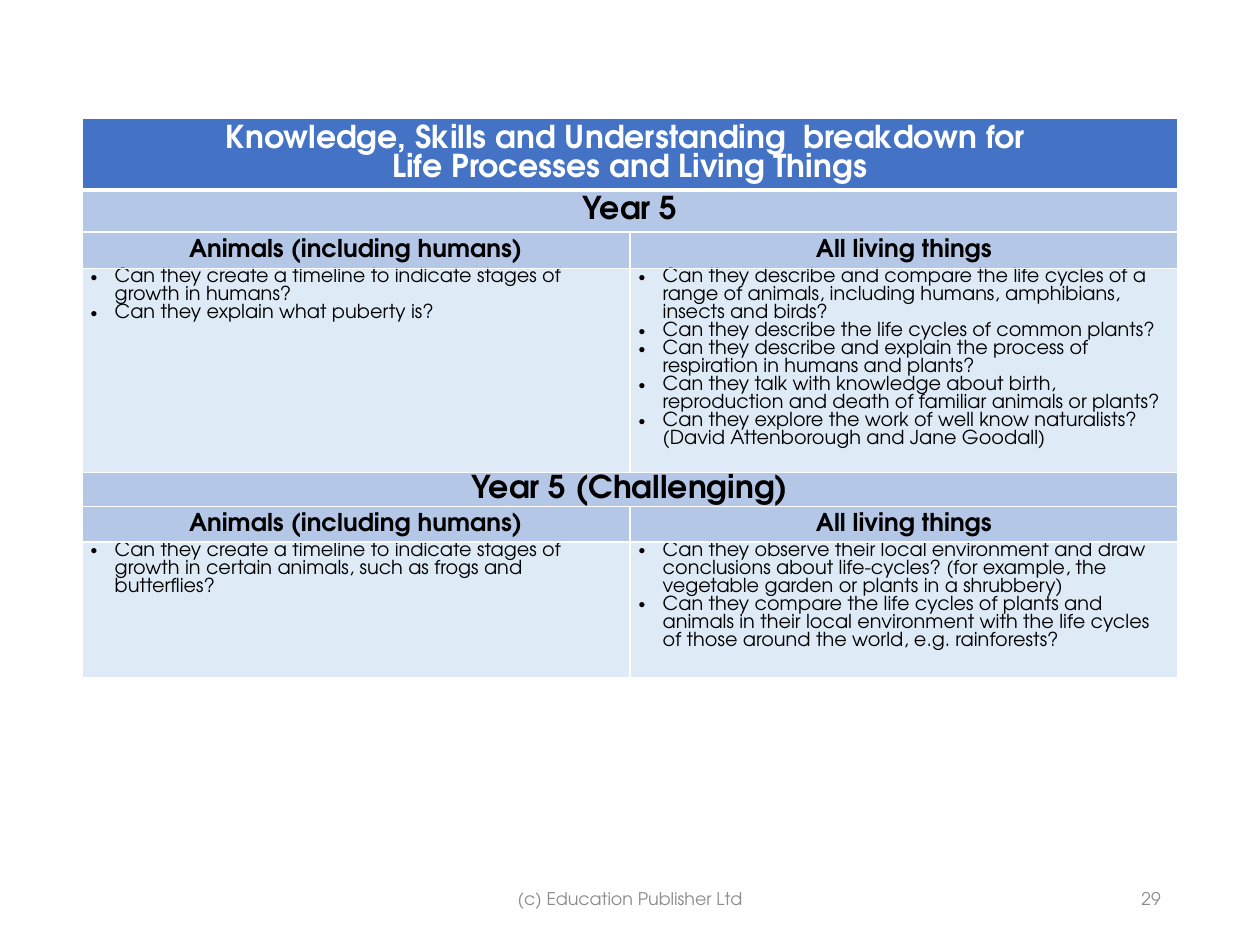
from lxml import etree
from pptx import Presentation
from pptx import util as u
from pptx.dml.color import RGBColor
from pptx.enum import text
from pptx.oxml import ns

THEME = {
    "font": "TeX Gyre Adventor",
    "title_fill": "4472C4", "heading_fill": "B4C7E7", "body_fill": "DEEBF7",
    "white": "FFFFFF", "black": "000000", "grey": "8C8C8C",
    "heading": 18, "subheading": 14, "body": 11, "footer": 10,
    "leading": 0.935, "indent": 0.19, "border": 1, "title_rule": 3,
}

TITLE = ["Knowledge, Skills and Understanding  breakdown for ",
         "Life Processes and Living Things"]
TOPICS = ["Animals (including humans)", "All living things"]
YEAR_5 = [
    ["Can they create a timeline to indicate stages of growth in humans?",
     "Can they explain what puberty is?"],
    ["Can they describe and compare the life cycles of a range of animals, including humans, amphibians, insects and birds?",
     "Can they describe the life cycles of common plants?",
     "Can they describe and explain the process of respiration in humans and plants?",
     "Can they talk with knowledge about birth, reproduction and death of familiar animals or plants?",
     "Can they explore the work of well know naturalists? (David Attenborough and Jane Goodall)"],
]
CHALLENGING = [
    ["Can they create a timeline to indicate stages of growth in certain animals, such as frogs and butterflies?"],
    ["Can they observe their local environment and draw conclusions about life-cycles? (for example, the vegetable garden or plants in a shrubbery)",
     "Can they compare the life cycles of plants and animals in their local environment with the life cycles of those around the world, e.g. rainforests?"],
]
TOPIC_CELLS = [[topic] for topic in TOPICS]

# (style, row height, cells); a row with one cell spans both columns
ROWS = [
    ("title", 0.56, [TITLE]),
    ("year", 0.33, [["Year 5"]]),
    ("topic", 0.29, TOPIC_CELLS),
    ("questions", 1.62, YEAR_5),
    ("challenge", 0.27, [["Year 5 (Challenging)"]]),
    ("topic", 0.28, TOPIC_CELLS),
    ("questions", 1.08, CHALLENGING),
]
HEADING = {"bold": True, "align": text.PP_ALIGN.CENTER}
# style: (fill, horizontal margin, vertical margin, anchor, text format)
STYLES = {
    "title": ("title_fill", 0.1, 0.05, text.MSO_ANCHOR.TOP,
              {**HEADING, "size": "heading", "color": "white"}),
    "year": ("heading_fill", 0.1, 0.05, text.MSO_ANCHOR.MIDDLE, {**HEADING, "size": "heading"}),
    "challenge": ("heading_fill", 0.07, 0, text.MSO_ANCHOR.MIDDLE, {**HEADING, "size": "heading"}),
    "topic": ("heading_fill", 0.07, 0, text.MSO_ANCHOR.MIDDLE, {**HEADING, "size": "subheading"}),
    "questions": ("body_fill", 0.07, 0, text.MSO_ANCHOR.TOP, {"size": "body", "bullet": True}),
}
TABLE_LEFT, TABLE_TOP, COLUMN_WIDTH = 0.65, 0.94, 4.35
FOOTER_TOP, FOOTER_HEIGHT = 6.95, 0.4
FOOTERS = [
    ("(c) Education Publisher Ltd", 3.31, 3.38, text.PP_ALIGN.CENTER),
    ("29", 7.06, 2.25, text.PP_ALIGN.RIGHT),
]


def rgb(name):
    return RGBColor.from_string(THEME[name])


def write(frame, lines, size, color="black", bold=False,
          align=text.PP_ALIGN.LEFT, bullet=False):
    points = THEME[size]
    for index, line in enumerate(lines):
        paragraph = frame.paragraphs[0] if index == 0 else frame.add_paragraph()
        paragraph.alignment = align
        paragraph.line_spacing = u.Pt(round(points * THEME["leading"], 1))
        run = paragraph.add_run()
        run.text = line
        run.font.name, run.font.size, run.font.bold = THEME["font"], u.Pt(points), bold
        run.font.color.rgb = rgb(color)
        if bullet:
            properties = paragraph._p.get_or_add_pPr()
            indent = u.Inches(THEME["indent"])
            properties.set("marL", str(indent))
            properties.set("indent", str(-indent))
            etree.SubElement(properties, ns.qn("a:buFont"), typeface="Arial")
            etree.SubElement(properties, ns.qn("a:buChar"), char="•")


def set_borders(cell, **widths):
    """Draw white edges; they must precede the fill in the cell properties."""
    properties = cell._tc.get_or_add_tcPr()
    for index, edge in enumerate("LRTB"):
        width = u.Pt(widths.get(edge, THEME["border"]))
        line = etree.Element(ns.qn(f"a:ln{edge}"), w=str(width))
        fill = etree.SubElement(line, ns.qn("a:solidFill"))
        etree.SubElement(fill, ns.qn("a:srgbClr"), val=THEME["white"])
        properties.insert(index, line)


def add_breakdown(slide):
    height = sum(row[1] for row in ROWS)
    columns = len(TOPICS)
    table = slide.shapes.add_table(
        len(ROWS), columns, u.Inches(TABLE_LEFT), u.Inches(TABLE_TOP),
        u.Inches(columns * COLUMN_WIDTH), u.Inches(height)).table
    for column in table.columns:
        column.width = u.Inches(COLUMN_WIDTH)
    for index, (style, row_height, contents) in enumerate(ROWS):
        fill, side, end, anchor, text_format = STYLES[style]
        table.rows[index].height = u.Inches(row_height)
        cells = [table.cell(index, column) for column in range(columns)]
        if len(contents) == 1:
            cells[0].merge(cells[-1])
        for cell in cells:
            cell.fill.solid()
            cell.fill.fore_color.rgb = rgb(fill)
            cell.margin_left = cell.margin_right = u.Inches(side)
            cell.margin_top = cell.margin_bottom = u.Inches(end)
            cell.vertical_anchor = anchor
            rule = {0: "B", 1: "T"}.get(index)
            set_borders(cell, **({rule: THEME["title_rule"]} if rule else {}))
        for cell, lines in zip(cells, contents):
            write(cell.text_frame, lines, **text_format)


def add_footers(slide):
    for label, left, width, align in FOOTERS:
        box = slide.shapes.add_textbox(u.Inches(left), u.Inches(FOOTER_TOP),
                                       u.Inches(width), u.Inches(FOOTER_HEIGHT))
        box.text_frame.word_wrap = True
        box.text_frame.vertical_anchor = text.MSO_ANCHOR.MIDDLE
        write(box.text_frame, [label], size="footer", color="grey", align=align)


def main():
    presentation = Presentation()
    presentation.slide_width, presentation.slide_height = u.Inches(10), u.Inches(7.5)
    slide = presentation.slides.add_slide(presentation.slide_layouts[6])
    add_breakdown(slide)
    add_footers(slide)
    presentation.save("out.pptx")


if __name__ == "__main__":
    main()
